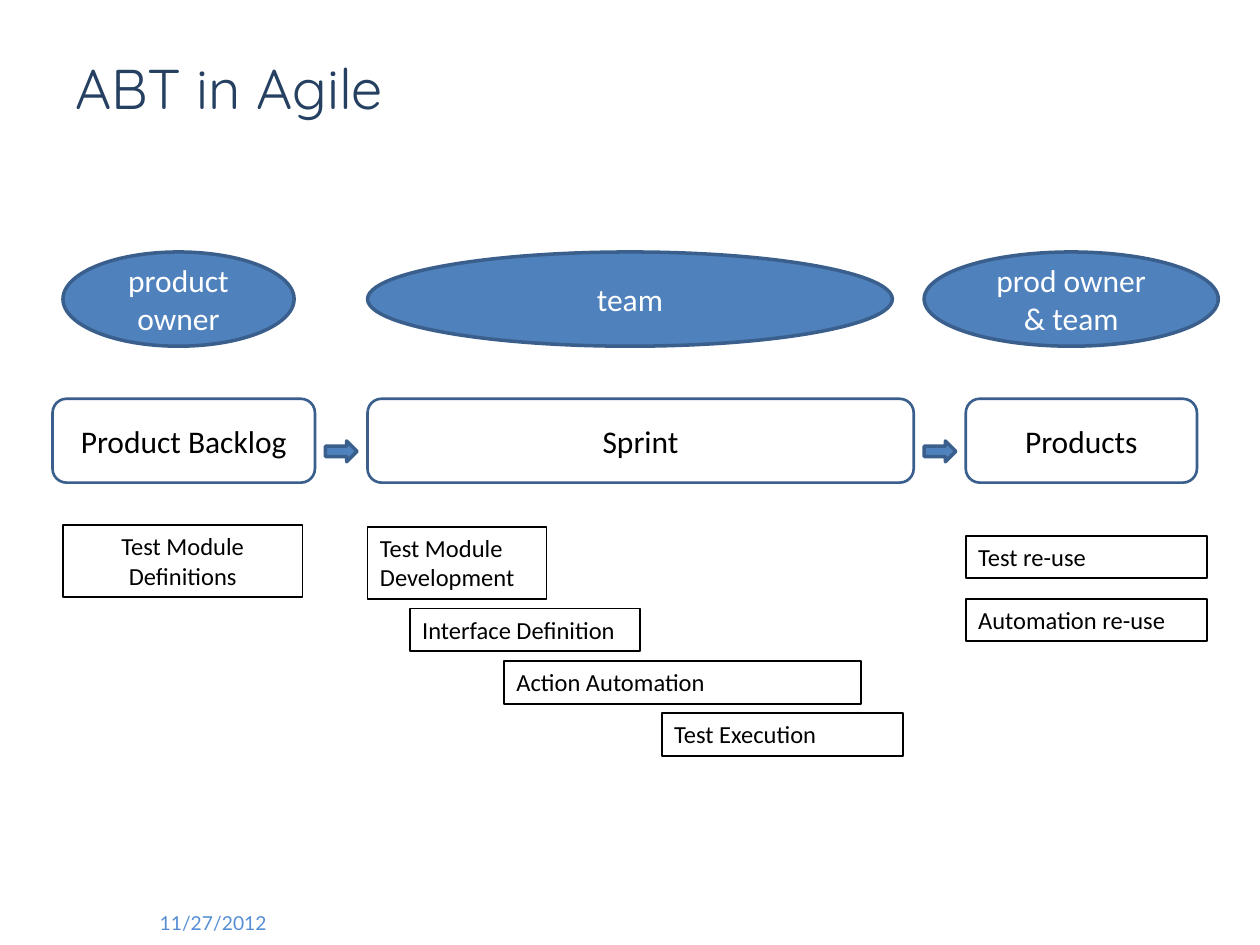
from pptx import Presentation
from pptx.dml.color import RGBColor
from pptx.enum.shapes import MSO_SHAPE
from pptx.enum.text import MSO_ANCHOR, PP_ALIGN
from pptx.util import Cm, Pt


def rgb(value):
    return RGBColor.from_string(value)


def write(sp, text, size=14, font="Calibri", color="000000",
          align=PP_ALIGN.LEFT, anchor=MSO_ANCHOR.TOP, wrap=True):
    tf = sp.text_frame
    tf.word_wrap = wrap
    tf.vertical_anchor = anchor
    tf.text = text
    for p in tf.paragraphs:
        p.alignment = align
        for r in p.runs:
            r.font.size = Pt(size)
            r.font.name = font
            r.font.color.rgb = rgb(color)


BLUE, EDGE = "4F81BD", "3A5F8C"
LEFT, MIDDLE, RIGHT = 1.27, 7.41, 19.47

prs = Presentation()
prs.slide_width, prs.slide_height = Cm(25.4), Cm(19.05)
s = prs.slides.add_slide(prs.slide_layouts[5])

title = s.shapes.title
title.left, title.top, title.width, title.height = Cm(LEFT), Cm(0.76), Cm(22.86), Cm(1.98)
write(title, "ABT in Agile", size=32, font="Quicksand", color="254061",
      anchor=MSO_ANCHOR.MIDDLE)

date = s.shapes.add_textbox(Cm(2.97), Cm(18.24), Cm(5.92), Cm(1.02))
write(date, "11/27/2012", size=11, font="Lato", color="558ED5")

tasks = [
    ("Test Module\nDefinitions", LEFT, 10.59, 4.83, 1.45, PP_ALIGN.CENTER),
    ("Test Module Development", MIDDLE, 10.62, 3.61, 1.45, PP_ALIGN.LEFT),
    ("Interface Definition", 8.26, 12.27, 4.65, 0.86, PP_ALIGN.LEFT),
    ("Action Automation", 10.16, 13.33, 7.2, 0.86, PP_ALIGN.LEFT),
    ("Test Execution", 13.34, 14.38, 4.87, 0.86, PP_ALIGN.LEFT),
    ("Test re-use", RIGHT, 10.8, 4.87, 0.86, PP_ALIGN.LEFT),
    ("Automation re-use", RIGHT, 12.07, 4.87, 0.86, PP_ALIGN.LEFT),
]
for text, x, y, w, h, align in tasks:
    sp = s.shapes.add_shape(MSO_SHAPE.RECTANGLE, Cm(x), Cm(y), Cm(w), Cm(h))
    sp.shadow.inherit = False
    sp.fill.background()
    sp.line.color.rgb = rgb("000000")
    sp.line.width = Pt(1)
    write(sp, text, align=align, wrap=text != "Interface Definition")

stages = [("Product Backlog", 1.06, 5.29), ("Sprint", MIDDLE, 11.01), ("Products", RIGHT, 4.66)]
roles = [("product owner", LEFT, 4.66), ("team", MIDDLE, 10.58), ("prod owner\v& team", 18.63, 5.93)]
arrows = [("", 6.56, 0.64), ("", 18.63, 0.64)]
rows = [
    (MSO_SHAPE.ROUNDED_RECTANGLE, stages, 8.04, 1.69, "FFFFFF", 1.5, "000000"),
    (MSO_SHAPE.OVAL, roles, 5.08, 1.9, BLUE, 2, "FFFFFF"),
    (MSO_SHAPE.RIGHT_ARROW, arrows, 8.89, 0.42, BLUE, 2, "FFFFFF"),
]
for shape, items, y, h, fill, line, color in rows:
    for text, x, w in items:
        sp = s.shapes.add_shape(shape, Cm(x), Cm(y), Cm(w), Cm(h))
        sp.shadow.inherit = False
        sp.fill.solid()
        sp.fill.fore_color.rgb = rgb(fill)
        sp.line.color.rgb = rgb(EDGE)
        sp.line.width = Pt(line)
        if text:
            write(sp, text, size=18, color=color, align=PP_ALIGN.CENTER,
                  anchor=MSO_ANCHOR.MIDDLE)

prs.save("out.pptx")
